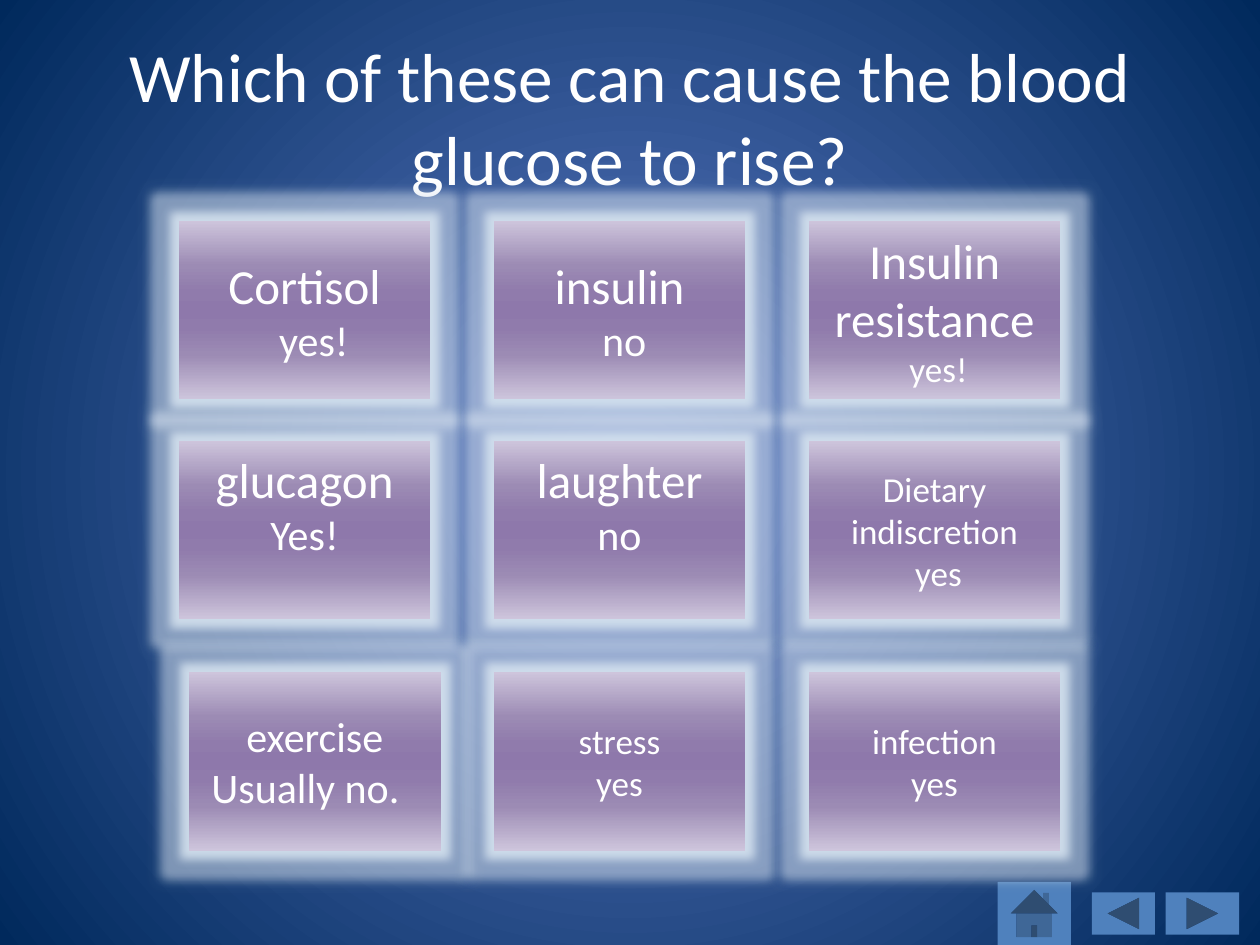
"""Build the blood glucose quiz slide."""
from lxml.etree import SubElement
from pptx import Presentation
from pptx.dml.color import RGBColor
from pptx.enum.shapes import MSO_SHAPE
from pptx.enum.text import MSO_ANCHOR, MSO_AUTO_SIZE, PP_ALIGN
from pptx.oxml.ns import qn
from pptx.util import Cm, Pt

COLORS = {
    "text": "FFFFFF", "button": "4F81BD",
    "center": "5E7CC5", "edge": "00295C",
    "pale": "CEC5DC", "soft": "9C8BB4", "mid": "907BAC", "deep": "8E78AB",
    "glow": "DBE5F1", "halo": "C6DFEC",
}
BACKGROUND_STOPS = [(0, "center"), (100, "edge")]
CARD_STOPS = [(0, "pale"), (25, "soft"), (40, "mid"), (50, "deep"),
              (60, "mid"), (75, "soft"), (100, "pale")]

CARD_WIDTH, CARD_HEIGHT = 5.08, 3.6
CARD_LEFT, CARD_PITCH = 3.6, 6.35
ROW_TOPS = [4.45, 8.89, 13.55]
ONE_LINE = 1.03

CARDS = [
    [dict(factor="Cortisol", answer="yes!", sizes=(28, 24), indent=10.8),
     dict(factor="insulin", answer="no", sizes=(28, 24), indent=5.4),
     dict(factor="Insulin resistance", answer="yes!", sizes=(28, 20), indent=4.5)],
    [dict(factor="glucagon", answer="Yes!", sizes=(28, 24), raised=ONE_LINE),
     dict(factor="laughter", answer="no", sizes=(28, 24), raised=ONE_LINE),
     dict(factor="Dietary indiscretion", answer="yes", sizes=(20, 20), indent=4.5)],
    [dict(factor="exercise", answer="Usually no.", sizes=(24, 24),
          outdent=10.8, shift=0.21),
     dict(factor="stress", answer="yes", sizes=(20, 20)),
     dict(factor="infection", answer="yes", sizes=(20, 20))],
]
BUTTONS = [
    (MSO_SHAPE.ACTION_BUTTON_BACK_OR_PREVIOUS, 22.01, 17.99, 1.27, 0.85),
    (MSO_SHAPE.ACTION_BUTTON_FORWARD_OR_NEXT, 23.5, 17.99, 1.48, 0.85),
    (MSO_SHAPE.ACTION_BUTTON_HOME, 20.11, 17.78, 1.48, 1.27),
]


def write(paragraph, text, size, color="text", indent=0, outdent=0):
    """Write one centred line with its format."""
    paragraph.alignment = PP_ALIGN.CENTER
    run = paragraph.add_run()
    run.text = text
    run.font.size = Pt(size)
    run.font.name = "Calibri"
    run.font.color.rgb = RGBColor.from_string(COLORS[color])
    properties = paragraph._p.get_or_add_pPr()
    properties.set("marL", str(Pt(indent)))
    properties.set("marR", str(Pt(outdent)))
    properties.set("indent", "0")


def add_color(parent, color, alpha=100):
    """Add a colour with an opacity in percent."""
    tint = SubElement(parent, qn("a:srgbClr"), val=COLORS[color])
    if alpha < 100:
        SubElement(tint, qn("a:alpha"), val=str(alpha * 1000))


def fill_gradient(fill, element, stops):
    """Fill with a gradient of the given stops and return its element."""
    fill.gradient()
    gradient = element.find(".//" + qn("a:gradFill"))
    stop_list = gradient.find(qn("a:gsLst"))
    for old_stop in list(stop_list):
        stop_list.remove(old_stop)
    for position, color in stops:
        add_color(SubElement(stop_list, qn("a:gs"), pos=str(position * 1000)), color)
    return gradient


def paint_background(slide):
    """Paint the round gradient behind the slide."""
    gradient = fill_gradient(slide.background.fill, slide._element, BACKGROUND_STOPS)
    gradient.remove(gradient.find(qn("a:lin")))
    circle = SubElement(gradient, qn("a:path"), path="circle")
    SubElement(circle, qn("a:fillToRect"), l="50000", t="50000", r="50000", b="50000")


def add_glow(card):
    """Surround a card with a wide glow and a brighter rim."""
    effects = card._element.spPr.find(qn("a:effectLst"))
    glow = SubElement(effects, qn("a:glow"), rad=str(Pt(11)))
    add_color(glow, "glow", 50)
    rim = SubElement(effects, qn("a:outerShdw"), blurRad=str(Pt(5)), dist="0",
                     sx="105000", sy="107000", algn="ctr", rotWithShape="0")
    add_color(rim, "halo", 80)


def add_plain_shape(slide, kind, left, top, width, height):
    """Add a preset shape without line or shadow."""
    shape = slide.shapes.add_shape(kind, Cm(left), Cm(top), Cm(width), Cm(height))
    shape.line.fill.background()
    shape.shadow.inherit = False
    return shape


def add_card(slide, left, top, factor, answer, sizes,
             indent=0, outdent=0, raised=0, shift=0):
    """Add a card with a factor and its answer."""
    card = add_plain_shape(slide, MSO_SHAPE.RECTANGLE, left + shift, top,
                           CARD_WIDTH, CARD_HEIGHT)
    fill_gradient(card.fill, card._element, CARD_STOPS)
    card.fill.gradient_angle = 270
    add_glow(card)
    frame = card.text_frame
    frame.word_wrap = True
    frame.vertical_anchor = MSO_ANCHOR.MIDDLE
    frame.margin_bottom = Cm(0.13 + raised)
    write(frame.paragraphs[0], factor, sizes[0])
    write(frame.add_paragraph(), answer, sizes[1], indent=indent, outdent=outdent)


def add_button(slide, kind, left, top, width, height):
    """Add a navigation button."""
    button = add_plain_shape(slide, kind, left, top, width, height)
    button.fill.solid()
    button.fill.fore_color.rgb = RGBColor.from_string(COLORS["button"])


def set_title(slide, text):
    """Place and write the title."""
    title = slide.shapes.title
    title.left, title.top = Cm(1.27), Cm(0.76)
    title.width, title.height = Cm(22.86), Cm(3.18)
    frame = title.text_frame
    frame.auto_size = MSO_AUTO_SIZE.NONE
    frame.word_wrap = True
    frame.vertical_anchor = MSO_ANCHOR.MIDDLE
    write(frame.paragraphs[0], text, 39.6)


def main():
    """Build and save the slide."""
    deck = Presentation()
    deck.slide_width, deck.slide_height = Cm(25.4), Cm(19.05)
    slide = deck.slides.add_slide(deck.slide_layouts[5])
    paint_background(slide)
    for button in BUTTONS:
        add_button(slide, *button)
    set_title(slide, "Which of these can cause the blood glucose to rise?")
    for top, row in zip(ROW_TOPS, CARDS):
        for column, card in enumerate(row):
            add_card(slide, CARD_LEFT + column * CARD_PITCH, top, **card)
    deck.save("out.pptx")


if __name__ == "__main__":
    main()
